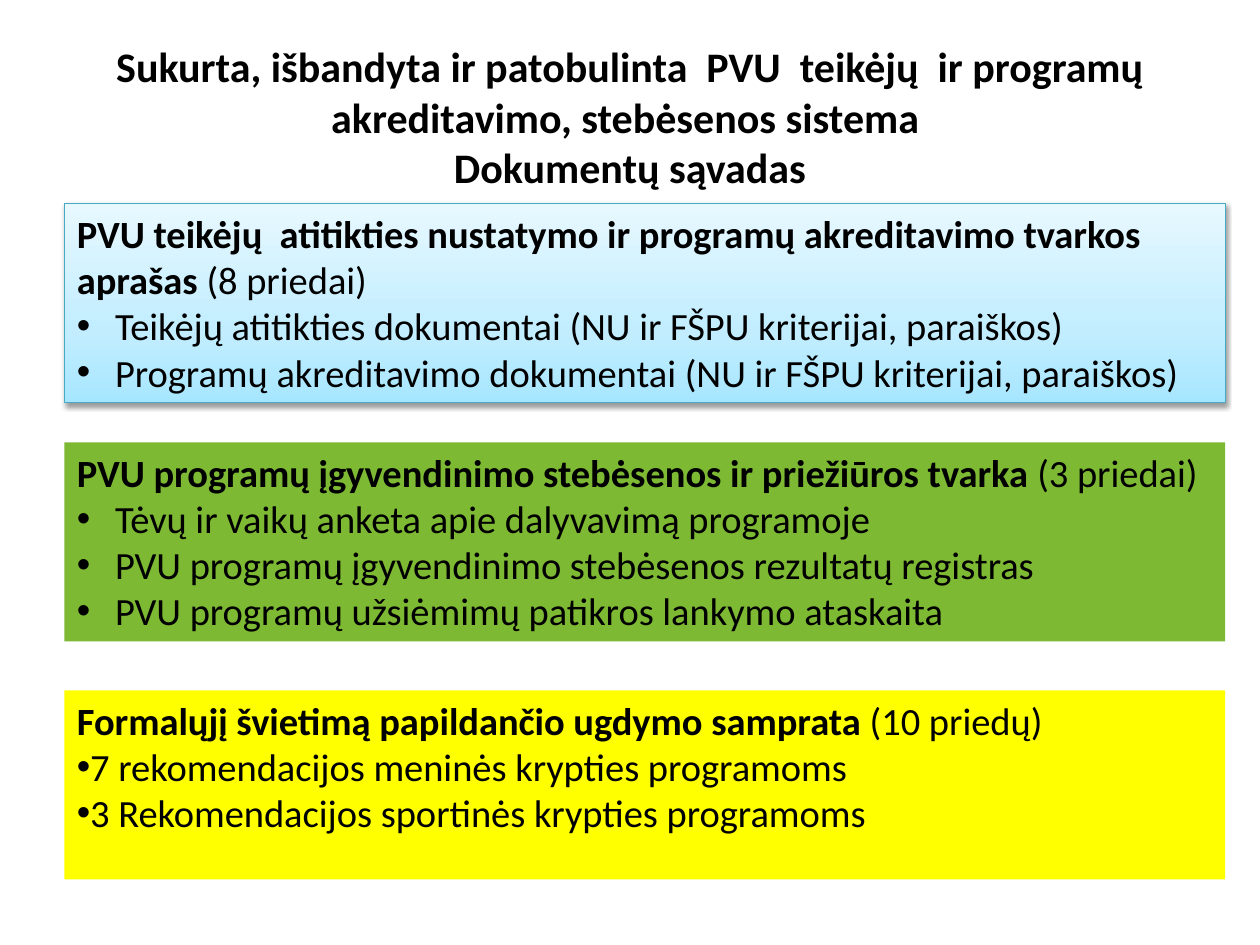
from copy import deepcopy

from lxml.etree import SubElement
from pptx import Presentation
from pptx.dml.color import RGBColor
from pptx.enum.shapes import MSO_SHAPE
from pptx.enum.text import MSO_ANCHOR, PP_ALIGN
from pptx.oxml.ns import qn
from pptx.util import Cm, Pt

BLACK = RGBColor(0x00, 0x00, 0x00)
TEAL = RGBColor(0x46, 0xAA, 0xC5)
GREEN = RGBColor(0x7D, 0xB9, 0x33)
YELLOW = RGBColor(0xFF, 0xFF, 0x00)
BLUES = [
    (0, RGBColor(0xA7, 0xE6, 0xFF)),
    (0.35, RGBColor(0xC1, 0xED, 0xFF)),
    (1, RGBColor(0xE7, 0xF8, 0xFF)),
]
FONT = "Calibri"

TITLE = ("Sukurta, išbandyta ir patobulinta  PVU  teikėjų  ir programų "
         "akreditavimo, stebėsenos sistema \vDokumentų sąvadas")

# top and height in cm, fill (None: blue gradient), bullet indent in cm,
# bold heading, plain note, bullet items
BOXES = [
    (4.11, 4.01, None, 0.77,
     "PVU teikėjų  atitikties nustatymo ir programų akreditavimo tvarkos aprašas ",
     "(8 priedai)",
     ["Teikėjų atitikties dokumentai (NU ir FŠPU kriterijai, paraiškos)",
      "Programų akreditavimo dokumentai (NU ir FŠPU kriterijai, paraiškos)"]),
    (8.92, 4.01, GREEN, 0.77,
     "PVU programų įgyvendinimo stebėsenos ir priežiūros tvarka ",
     "(3 priedai)",
     ["Tėvų ir vaikų anketa apie dalyvavimą programoje",
      "PVU programų įgyvendinimo stebėsenos rezultatų registras",
      "PVU programų užsiėmimų patikros lankymo ataskaita"]),
    (13.92, 3.81, YELLOW, 0,
     "Formalųjį švietimą papildančio ugdymo samprata ",
     "(10 priedų)",
     ["7 rekomendacijos meninės krypties programoms",
      "3 Rekomendacijos sportinės krypties programoms"]),
]
LEFT, WIDTH = Cm(1.3), Cm(23.4)


def style(run, size, bold):
    font = run.font
    font.name, font.size, font.bold = FONT, Pt(size), bold
    font.color.rgb = BLACK


def add_bullet(para, indent):
    props = para._p.get_or_add_pPr()
    props.set("marL", str(Cm(indent)))
    props.set("indent", str(-Cm(indent)))
    SubElement(props, qn("a:buFont"), typeface="Arial")
    SubElement(props, qn("a:buChar"), char="•")


def shade(box):
    """Give the box its blue gradient, thin outline and soft shadow."""
    box.fill.gradient()
    box.fill.gradient_angle = 90
    stops = box._element.spPr.find(qn("a:gradFill")).find(qn("a:gsLst"))
    stops.append(deepcopy(stops[0]))
    for stop, (place, color) in zip(box.fill.gradient_stops, BLUES):
        stop.position = place
        stop.color.rgb = color
    box.line.color.rgb = TEAL
    box.line.width = Pt(0.75)
    effects = box._element.spPr.find(qn("a:effectLst"))
    shadow = SubElement(effects, qn("a:outerShdw"), blurRad=str(Pt(3.1)),
                        dist=str(Pt(1.6)), dir="5400000", rotWithShape="0")
    black = SubElement(shadow, qn("a:srgbClr"), val=str(BLACK))
    SubElement(black, qn("a:alpha"), val="38000")


def add_box(slide, top, height, fill, indent, head, note, items):
    box = slide.shapes.add_shape(MSO_SHAPE.RECTANGLE, LEFT, Cm(top),
                                 WIDTH, Cm(height))
    box.shadow.inherit = False
    if fill is None:
        shade(box)
    else:
        box.fill.solid()
        box.fill.fore_color.rgb = fill
        box.line.fill.background()
    frame = box.text_frame
    frame.word_wrap = True
    frame.vertical_anchor = MSO_ANCHOR.TOP
    frame.text = head
    first = frame.paragraphs[0]
    first.add_run().text = note
    for item in items:
        para = frame.add_paragraph()
        para.text = item
        add_bullet(para, indent)
    for para in frame.paragraphs:
        para.alignment = PP_ALIGN.LEFT
        for run in para.runs:
            style(run, 22, run.text == head)


def main():
    deck = Presentation()
    deck.slide_width, deck.slide_height = Cm(25.4), Cm(19.05)
    slide = deck.slides.add_slide(deck.slide_layouts[5])
    title = slide.shapes.title
    title.left, title.top = Cm(1.27), Cm(0.76)
    title.width, title.height = Cm(22.86), Cm(3.18)
    title.text_frame.vertical_anchor = MSO_ANCHOR.MIDDLE
    para = title.text_frame.paragraphs[0]
    para.text = TITLE
    para.alignment = PP_ALIGN.CENTER
    for run in para.runs:
        style(run, 24, True)
    for box in BOXES:
        add_box(slide, *box)
    deck.save("out.pptx")


if __name__ == "__main__":
    main()
